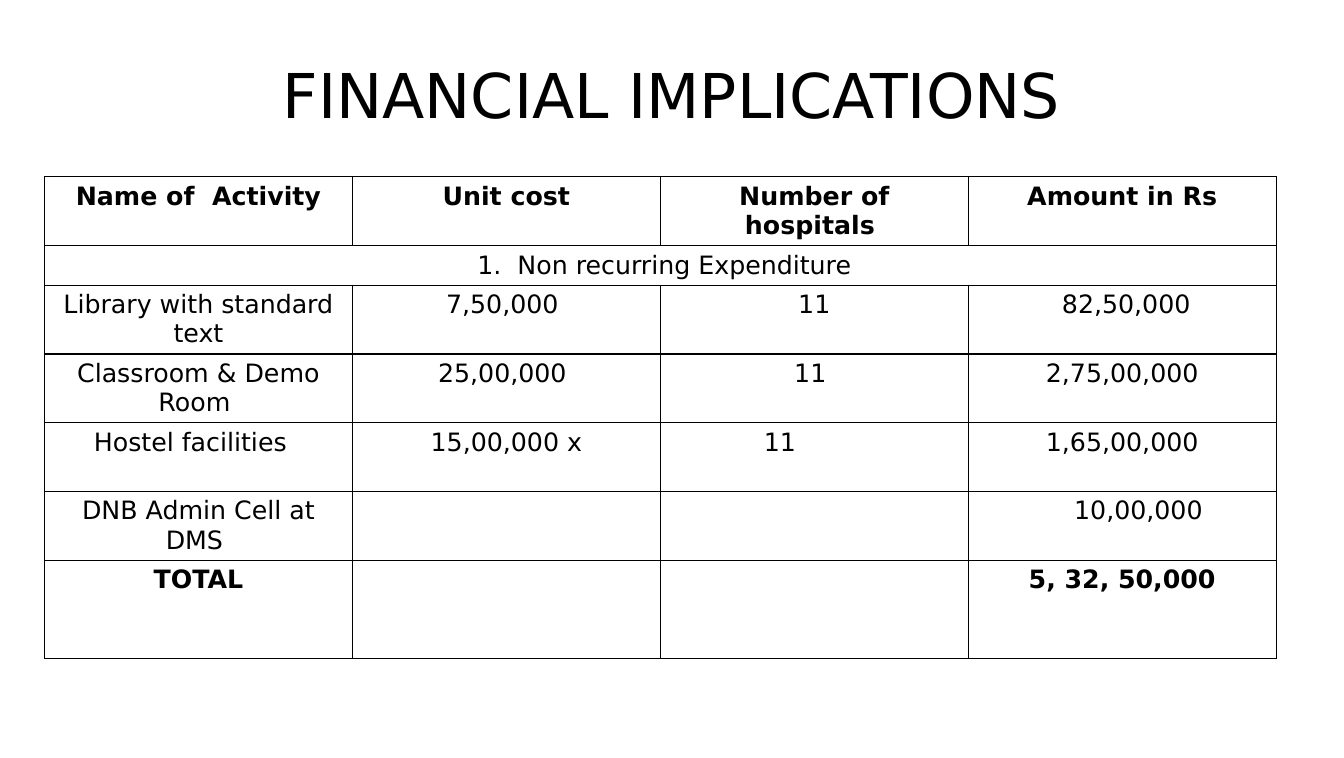
from lxml.etree import SubElement
from pptx import Presentation
from pptx.dml.color import RGBColor
from pptx.enum.text import MSO_ANCHOR, PP_ALIGN
from pptx.oxml.ns import qn
from pptx.util import Inches, Pt

SLIDE_WIDTH, SLIDE_HEIGHT = 13.3, 7.5
FONT = "DejaVu Sans"
COLORS = {"ink": "000000", "paper": "FFFFFF"}

HEADER_ROW, SECTION_ROW, TOTAL_ROW = 0, 1, 6
COSTS = [
    ["Name of  Activity", "Unit cost", "Number of hospitals ", "Amount in Rs"],
    ["1.  Non recurring Expenditure", "", "", ""],
    ["Library with standard text", "7,50,000 ", "11", " 82,50,000"],
    ["Classroom & Demo Room ", "25,00,000 ", "11 ", "2,75,00,000"],
    ["Hostel facilities", "15,00,000 x", "11", "1,65,00,000"],
    ["DNB Admin Cell at DMS ", "", "", "10,00,000"],
    ["TOTAL", "", "", "5, 32, 50,000"],
]
ROW_HEIGHTS = [0.68, 0.39, 0.68, 0.68, 0.68, 0.68, 0.97]
# Sideways shift of the centred text, in inches, by (row, column)
NUDGES = {(1, 0): 0.04, (4, 0): -0.08, (4, 2): -0.34, (5, 3): 0.16}


def style_text(text_frame, size, bold=False):
    for paragraph in text_frame.paragraphs:
        paragraph.alignment = PP_ALIGN.CENTER
        for run in paragraph.runs:
            run.font.name = FONT
            run.font.size = Pt(size)
            run.font.bold = bold
            run.font.color.rgb = RGBColor.from_string(COLORS["ink"])


def add_borders(cell):
    properties = cell._tc.get_or_add_tcPr()
    for side in ("a:lnL", "a:lnR", "a:lnT", "a:lnB"):
        line = SubElement(properties, qn(side), w=str(Pt(1)))
        fill = SubElement(line, qn("a:solidFill"))
        SubElement(fill, qn("a:srgbClr"), val=COLORS["ink"])


def place_title(slide, left, top, width, height):
    title = slide.shapes.title
    title.left, title.top = Inches(left), Inches(top)
    title.width, title.height = Inches(width), Inches(height)
    title.text_frame.text = "FINANCIAL IMPLICATIONS"
    title.text_frame.vertical_anchor = MSO_ANCHOR.MIDDLE
    style_text(title.text_frame, 44)


def style_cell(cell, text, nudge, bold):
    cell.margin_left = Inches(0.13 + 2 * max(nudge, 0))
    cell.margin_right = Inches(0.13 + 2 * max(-nudge, 0))
    cell.margin_top = cell.margin_bottom = Inches(0.05)
    add_borders(cell)
    cell.fill.background()
    cell.text_frame.text = text
    style_text(cell.text_frame, 18, bold)


def place_costs(slide, left, top, width):
    column_count = len(COSTS[HEADER_ROW])
    costs = slide.shapes.add_table(
        len(COSTS), column_count, Inches(left), Inches(top),
        Inches(width), Inches(sum(ROW_HEIGHTS))).table
    costs.first_row = costs.horz_banding = False
    for column in costs.columns:
        column.width = Inches(width / column_count)

    for r, (texts, height) in enumerate(zip(COSTS, ROW_HEIGHTS)):
        costs.rows[r].height = Inches(height)
        for c, text in enumerate(texts):
            style_cell(costs.cell(r, c), text, NUDGES.get((r, c), 0),
                       r in (HEADER_ROW, TOTAL_ROW))

    # Section heading runs across all columns
    costs.cell(SECTION_ROW, 0).merge(costs.cell(SECTION_ROW, column_count - 1))


def main():
    deck = Presentation()
    deck.slide_width, deck.slide_height = Inches(SLIDE_WIDTH), Inches(SLIDE_HEIGHT)
    slide = deck.slides.add_slide(deck.slide_layouts[5])
    slide.background.fill.solid()
    slide.background.fill.fore_color.rgb = RGBColor.from_string(COLORS["paper"])

    place_title(slide, SLIDE_WIDTH * 0.05, SLIDE_HEIGHT * 0.04,
                SLIDE_WIDTH * 0.9, SLIDE_HEIGHT / 6)
    place_costs(slide, 0.44, 1.75, 12.19)
    deck.save("out.pptx")


if __name__ == "__main__":
    main()
